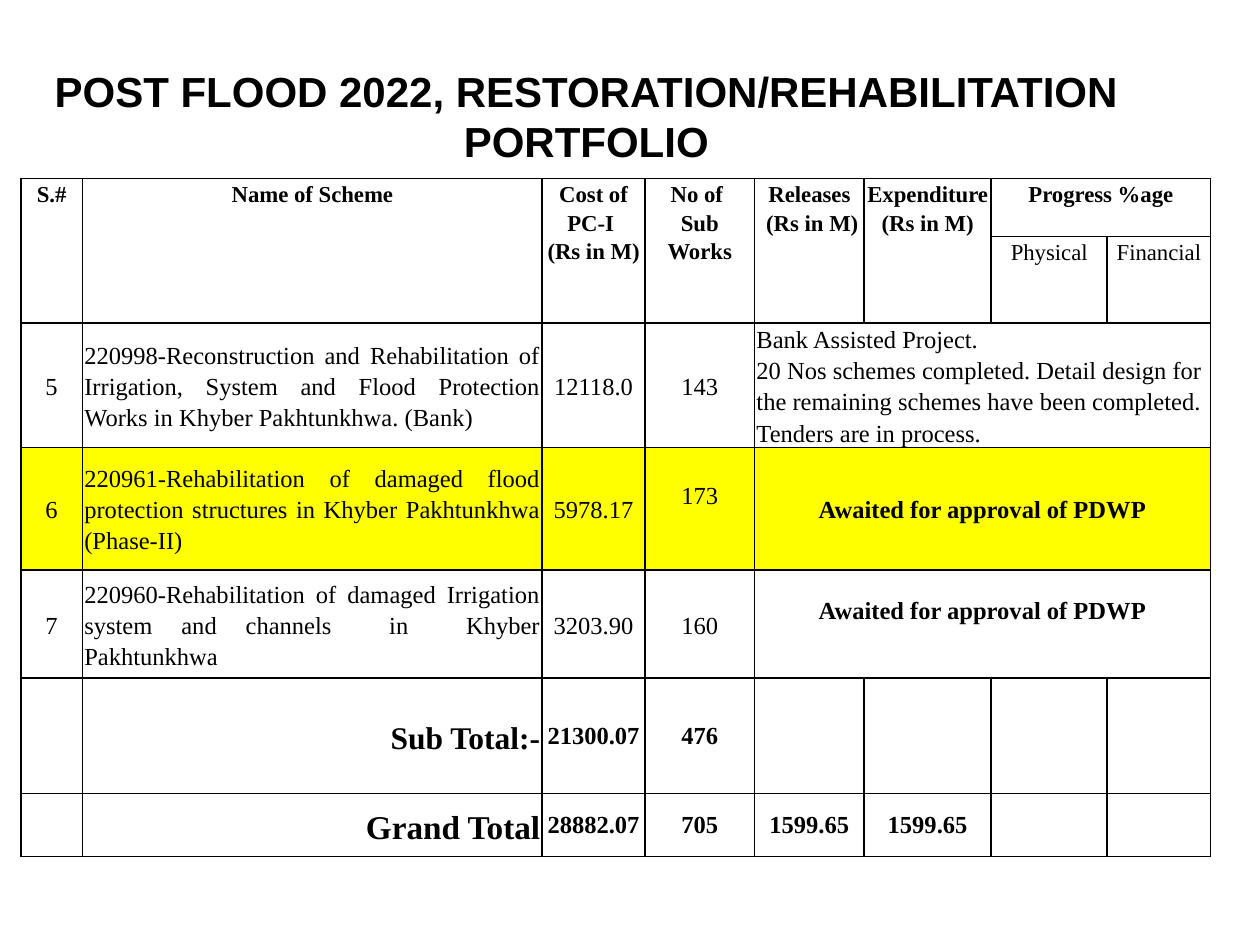
from dataclasses import dataclass

from lxml.etree import SubElement
from pptx import Presentation
from pptx.dml.color import RGBColor
from pptx.enum.text import MSO_ANCHOR as Anchor, MSO_AUTO_SIZE as AutoSize, PP_ALIGN as Align
from pptx.oxml.ns import qn
from pptx.util import Cm, Pt


@dataclass(frozen=True)
class Theme:
    ink: RGBColor = RGBColor(0, 0, 0)
    paper: RGBColor = RGBColor(255, 255, 255)
    highlight: RGBColor = RGBColor(255, 255, 0)
    title_font: str = "Arial"
    table_font: str = "Times New Roman"
    title: Pt = Pt(24)
    header: Pt = Pt(13)
    body: Pt = Pt(14)
    subtotal: Pt = Pt(18)
    total: Pt = Pt(19)
    rule: Pt = Pt(1)


theme = Theme()


def add_borders(cell):
    tc_pr = cell._tc.get_or_add_tcPr()
    for side in ("lnL", "lnR", "lnT", "lnB"):
        ln = SubElement(tc_pr, qn(f"a:{side}"), w=str(theme.rule))
        fill = SubElement(ln, qn("a:solidFill"))
        SubElement(fill, qn("a:srgbClr"), val=str(theme.ink))


def write(cell, text, size, bold=False, align=Align.CENTER, anchor=Anchor.MIDDLE, spacing=1.15):
    cell.vertical_anchor = anchor
    cell.margin_left = cell.margin_right = Cm(0.04 if spacing else 0)
    cell.margin_top = cell.margin_bottom = 0
    cell.text = text
    for p in cell.text_frame.paragraphs:
        p.alignment = align
        p.line_spacing = spacing
        p.font.name = theme.table_font
        p.font.size = size
        p.font.bold = bold
        p.font.color.rgb = theme.ink


prs = Presentation()
prs.slide_width, prs.slide_height = Cm(25.4), Cm(19.05)
s = prs.slides.add_slide(prs.slide_layouts[5])

title = s.shapes.title
title.left, title.top, title.width, title.height = Cm(0.43), Cm(1.27), Cm(22.78), Cm(2.13)
tf = title.text_frame
tf.text = "POST FLOOD 2022, RESTORATION/REHABILITATION PORTFOLIO"
tf.word_wrap = True
tf.auto_size = AutoSize.NONE
tf.vertical_anchor = Anchor.MIDDLE
tf.margin_left = tf.margin_right = Cm(0.08)
tf.margin_top = tf.margin_bottom = Cm(0.03)
p = tf.paragraphs[0]
p.alignment = Align.CENTER
p.font.name = theme.title_font
p.font.size = theme.title
p.font.bold = True
p.font.color.rgb = theme.ink

col_widths = [1.24, 9.27, 2.07, 2.21, 2.21, 2.56, 2.34, 2.08]
row_heights = [1.17, 1.73, 2.5, 2.47, 2.18, 2.33, 1.27]
table = s.shapes.add_table(
    len(row_heights), len(col_widths), Cm(0.42), Cm(3.6), Cm(sum(col_widths)), Cm(sum(row_heights))
).table
table.first_row = table.horz_banding = False
for col, width in zip(table.columns, col_widths):
    col.width = Cm(width)
for row, height in zip(table.rows, row_heights):
    row.height = Cm(height)

highlighted_row = 3
for i, row in enumerate(table.rows):
    for cell in row.cells:
        add_borders(cell)
        cell.fill.solid()
        cell.fill.fore_color.rgb = theme.highlight if i == highlighted_row else theme.paper

headers = [
    "S.#",
    "Name of Scheme",
    "Cost of PC-I \n(Rs in M)",
    "No of \nSub Works",
    "Releases\n (Rs in M)",
    "Expenditure \n(Rs in M)",
]
for j, text in enumerate(headers):
    table.cell(0, j).merge(table.cell(1, j))
    write(table.cell(0, j), text, theme.header, bold=True, anchor=Anchor.TOP)
table.cell(0, 6).merge(table.cell(0, 7))
write(table.cell(0, 6), "Progress %age", theme.header, bold=True, anchor=Anchor.TOP)
for j, text in enumerate(["Physical", "Financial"], 6):
    write(table.cell(1, j), text, theme.header, anchor=Anchor.TOP)

awaited = "Awaited for approval of PDWP"
schemes = [
    ("5", "220998-Reconstruction and Rehabilitation of Irrigation, System and Flood Protection "
     "Works in Khyber Pakhtunkhwa. (Bank)", "12118.0", "143",
     "Bank Assisted Project.\n20 Nos schemes completed. Detail design for the remaining schemes "
     "have been completed. Tenders are in process."),
    ("6", "220961-Rehabilitation of damaged flood protection structures in Khyber Pakhtunkhwa "
     "(Phase-II)", "5978.17", "173", awaited),
    ("7", "220960-Rehabilitation of damaged Irrigation system and channels  in  Khyber "
     "Pakhtunkhwa", "3203.90", "160", awaited),
]
for i, (number, name, cost, works, status) in enumerate(schemes, 2):
    write(table.cell(i, 0), number, theme.body)
    write(table.cell(i, 1), name, theme.body, align=Align.JUSTIFY)
    write(table.cell(i, 2), cost, theme.body)
    write(table.cell(i, 3), works, theme.body)
    table.cell(i, 4).merge(table.cell(i, 7))
    is_awaited = status == awaited
    write(table.cell(i, 4), status, theme.body, bold=is_awaited,
          align=Align.CENTER if is_awaited else Align.LEFT)
for i, j in [(3, 3), (4, 4)]:
    table.cell(i, j).margin_bottom = Cm(0.6)

totals = [
    ("Sub Total:-", theme.subtotal, ["21300.07", "476"]),
    ("Grand Total", theme.total, ["28882.07", "705", "1599.65", "1599.65"]),
]
for i, (label, size, amounts) in enumerate(totals, 5):
    write(table.cell(i, 1), label, size, bold=True, align=Align.RIGHT)
    for j, amount in enumerate(amounts, 2):
        write(table.cell(i, j), amount, theme.body, bold=True, spacing=None)

prs.save("out.pptx")
